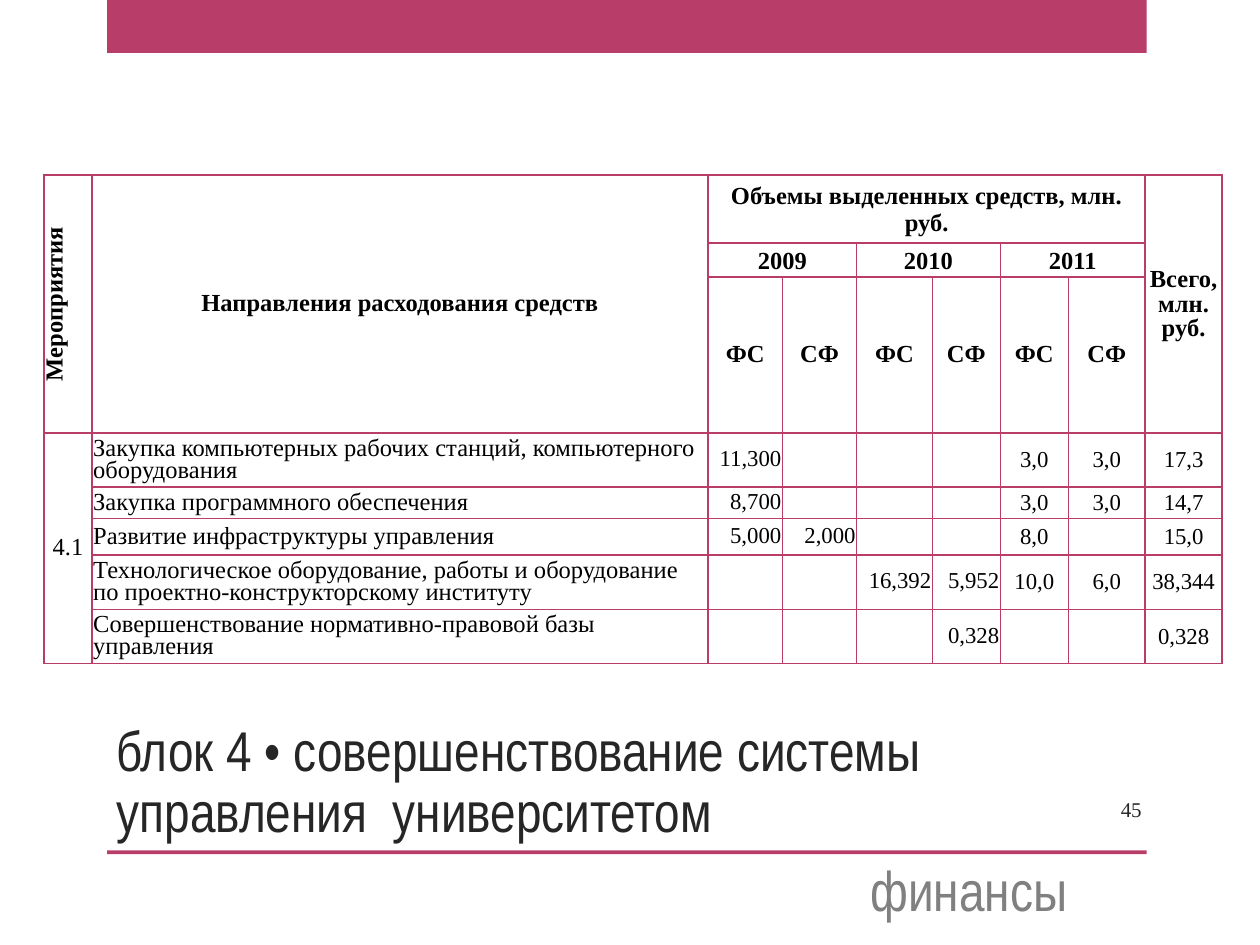
"""Build the funding slide for block 4."""
from dataclasses import dataclass
from typing import Optional

from lxml.etree import SubElement
from pptx import Presentation
from pptx.dml.color import RGBColor
from pptx.enum.shapes import MSO_SHAPE
from pptx.enum.text import MSO_ANCHOR, PP_ALIGN
from pptx.oxml.ns import qn
from pptx.util import Inches, Pt


@dataclass(frozen=True)
class Theme:
    accent: str = "B83D68"
    ink: str = "000000"
    heading: str = "262626"
    muted: str = "808080"
    serif: str = "Times New Roman"
    narrow: str = "Arial Narrow"
    heading_size: int = 32
    table_size: int = 14
    value_size: int = 13
    number_size: int = 12


THEME = Theme()


@dataclass(frozen=True)
class Style:
    size: int
    font: str = THEME.serif
    color: str = THEME.ink
    bold: bool = False
    align: PP_ALIGN = PP_ALIGN.CENTER
    spacing: Optional[float] = None
    inset: float = 0.01


@dataclass(frozen=True)
class Header:
    text: str
    row: int
    column: int
    rows: int = 1
    columns: int = 1
    spacing: Optional[float] = None


@dataclass(frozen=True)
class Caption:
    text: str
    box: tuple
    style: Style
    anchor: MSO_ANCHOR
    hanging: float = 0


COLUMN_WIDTHS = [0.38, 4.89, 0.59, 0.59, 0.6, 0.54, 0.54, 0.61, 0.61]
ROW_HEIGHTS = [0.54, 0.27, 0.51, 0.43, 0.25, 0.29, 0.43, 0.43]
FIRST_YEAR_COLUMN, FIRST_BODY_ROW, FIRST_CENTRED_COLUMN = 2, 3, 6

HEADERS = [
    Header("Мероприятия", 0, 0, rows=3, spacing=0.8),
    Header("Направления расходования средств", 0, 1, rows=3, spacing=0.8),
    Header("Объемы выделенных средств, млн. руб.", 0, 2, columns=6),
    Header("Всего, млн. руб.", 0, 8, rows=3, spacing=0.9),
]
for order, year in enumerate(("2009", "2010", "2011")):
    year_column = FIRST_YEAR_COLUMN + 2 * order
    HEADERS.append(Header(year, 1, year_column, columns=2))
    for offset, source in enumerate(("ФС", "СФ")):
        HEADERS.append(Header(source, 2, year_column + offset, spacing=0.8))

EXPENSES = [
    ("Закупка компьютерных рабочих станций, компьютерного оборудования",
     "11,300", "", "", "", "3,0", "3,0", "17,3"),
    ("Закупка программного обеспечения",
     "8,700", "", "", "", "3,0", "3,0", "14,7"),
    ("Развитие инфраструктуры управления",
     "5,000", "2,000", "", "", "8,0", "", "15,0"),
    ("Технологическое оборудование, работы и оборудование "
     "по проектно-конструкторскому институту",
     "", "", "16,392", "5,952", "10,0", "6,0", "38,344"),
    ("Совершенствование нормативно-правовой базы управления",
     "", "", "", "0,328", "", "", "0,328"),
]

ACTIVITY = Style(THEME.table_size, spacing=0.8)
PURPOSE = Style(THEME.table_size, align=PP_ALIGN.LEFT, spacing=0.8)
EARLY_SUM = Style(THEME.value_size, align=PP_ALIGN.RIGHT, spacing=0.8)
LATE_SUM = Style(THEME.value_size, inset=0)

BARS = [(0.85, 0, 8.25, 0.42), (0.85, 6.75, 8.25, 0.03)]
CAPTIONS = [
    Caption("блок 4 • совершенствование системы управления  университетом",
            (0.83, 5.88, 8.26, 0.87),
            Style(THEME.heading_size, THEME.narrow, THEME.heading,
                  align=PP_ALIGN.LEFT, spacing=0.9), MSO_ANCHOR.BOTTOM),
    Caption("финансы", (6.81, 6.81, 2.19, 0.49),
            Style(THEME.heading_size, THEME.narrow, THEME.muted,
                  align=PP_ALIGN.LEFT), MSO_ANCHOR.MIDDLE, hanging=0.3),
    Caption("45", (8.33, 6.22, 0.83, 0.4),
            Style(THEME.number_size, color=THEME.heading,
                  align=PP_ALIGN.RIGHT), MSO_ANCHOR.MIDDLE),
]


def write(paragraph, text: str, style: Style) -> None:
    """Put styled text into a paragraph."""
    paragraph.alignment = style.align
    if style.spacing:
        paragraph.line_spacing = style.spacing
    if not text:
        SubElement(paragraph._p, qn("a:endParaRPr"), sz=str(style.size * 100))
        return
    paragraph.text = text
    font = paragraph.runs[0].font
    font.name, font.size, font.bold = style.font, Pt(style.size), style.bold
    font.color.rgb = RGBColor.from_string(style.color)


def draw_bar(slide, box: tuple) -> None:
    """Draw an accent bar."""
    bar = slide.shapes.add_shape(MSO_SHAPE.RECTANGLE, *map(Inches, box))
    bar.shadow.inherit = False
    bar.fill.solid()
    bar.fill.fore_color.rgb = RGBColor.from_string(THEME.accent)
    bar.line.fill.background()


def draw_caption(slide, caption: Caption) -> None:
    """Draw a text box."""
    frame = slide.shapes.add_textbox(*map(Inches, caption.box)).text_frame
    frame.word_wrap = True
    frame.vertical_anchor = caption.anchor
    paragraph = frame.paragraphs[0]
    write(paragraph, caption.text, caption.style)
    if caption.hanging:
        properties = paragraph._p.get_or_add_pPr()
        properties.set("marL", str(Inches(caption.hanging)))
        properties.set("indent", str(-Inches(caption.hanging)))


def fill_cell(cell, text: str, style: Style) -> None:
    """Write a cell and outline it."""
    write(cell.text_frame.paragraphs[0], text, style)
    cell.vertical_anchor = MSO_ANCHOR.MIDDLE
    cell.margin_left = cell.margin_top = cell.margin_right = Inches(style.inset)
    cell.margin_bottom = 0
    properties = cell._tc.get_or_add_tcPr()
    for side in ("lnL", "lnR", "lnT", "lnB"):
        border = SubElement(properties, qn(f"a:{side}"), w=str(Pt(1)))
        paint = SubElement(border, qn("a:solidFill"))
        SubElement(paint, qn("a:srgbClr"), val=THEME.accent)
    cell.fill.background()


def body_style(column: int) -> Style:
    """Choose the style of a body column."""
    if column < FIRST_YEAR_COLUMN:
        return (ACTIVITY, PURPOSE)[column]
    return EARLY_SUM if column < FIRST_CENTRED_COLUMN else LATE_SUM


def draw_table(slide) -> None:
    """Draw the table of expenses."""
    box = map(Inches, (0.35, 1.39, sum(COLUMN_WIDTHS), sum(ROW_HEIGHTS)))
    table = slide.shapes.add_table(len(ROW_HEIGHTS), len(COLUMN_WIDTHS), *box).table
    table.first_row = table.horz_banding = False
    for column, width in zip(table.columns, COLUMN_WIDTHS):
        column.width = Inches(width)
    for row, height in zip(table.rows, ROW_HEIGHTS):
        row.height = Inches(height)

    headers = {(header.row, header.column): header for header in HEADERS}
    for row in range(FIRST_BODY_ROW):
        for column in range(len(COLUMN_WIDTHS)):
            header = headers.get((row, column), Header("", row, column))
            style = Style(THEME.table_size, bold=True, spacing=header.spacing)
            fill_cell(table.cell(row, column), header.text, style)
    for row, expense in enumerate(EXPENSES, FIRST_BODY_ROW):
        activity = "4.1" if row == FIRST_BODY_ROW else ""
        for column, text in enumerate((activity, *expense)):
            fill_cell(table.cell(row, column), text, body_style(column))

    activity_span = Header("4.1", FIRST_BODY_ROW, 0, rows=len(EXPENSES))
    for span in (*HEADERS, activity_span):
        if span.rows * span.columns > 1:
            last = table.cell(span.row + span.rows - 1, span.column + span.columns - 1)
            table.cell(span.row, span.column).merge(last)
    table.cell(0, 0)._tc.get_or_add_tcPr().set("vert", "vert270")


def main() -> None:
    """Build and save the slide."""
    deck = Presentation()
    deck.slide_width, deck.slide_height = Inches(10), Inches(7.5)
    slide = deck.slides.add_slide(deck.slide_layouts[6])
    for box in BARS:
        draw_bar(slide, box)
    draw_table(slide)
    for caption in CAPTIONS:
        draw_caption(slide, caption)
    deck.save("out.pptx")


if __name__ == "__main__":
    main()
